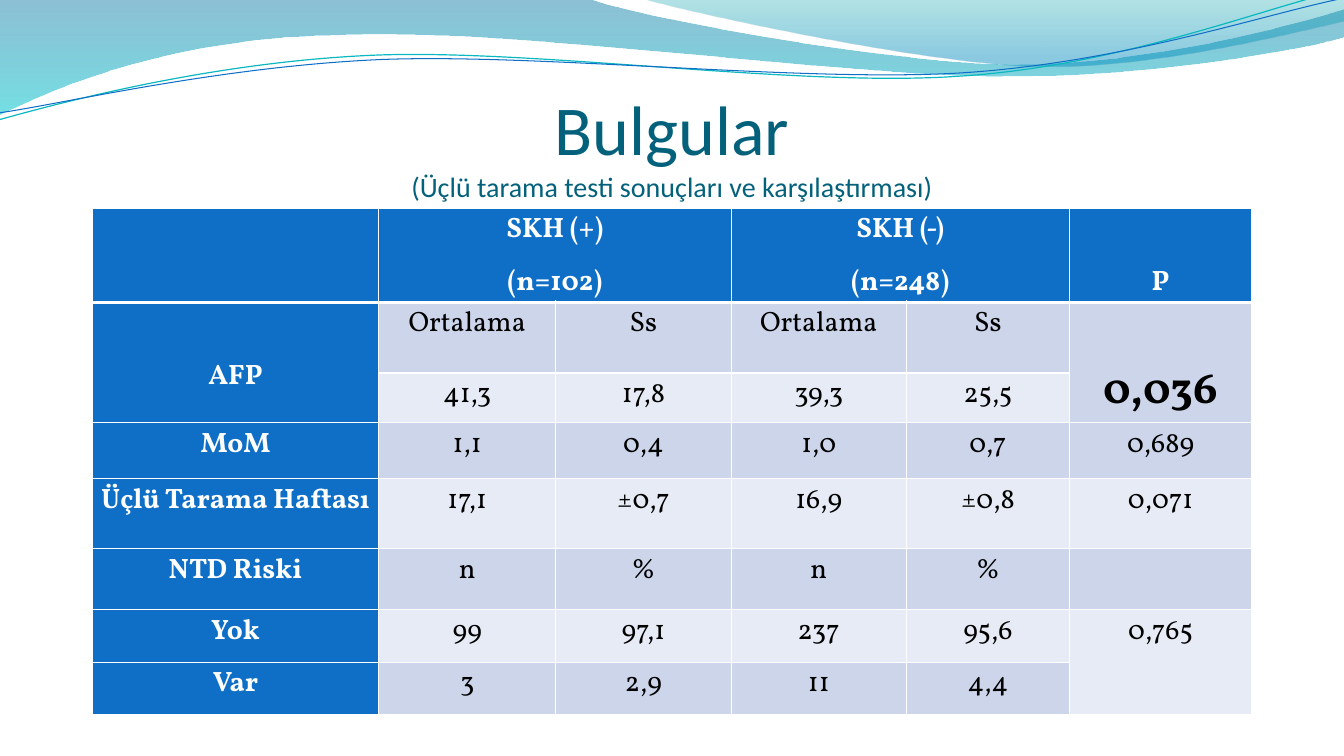
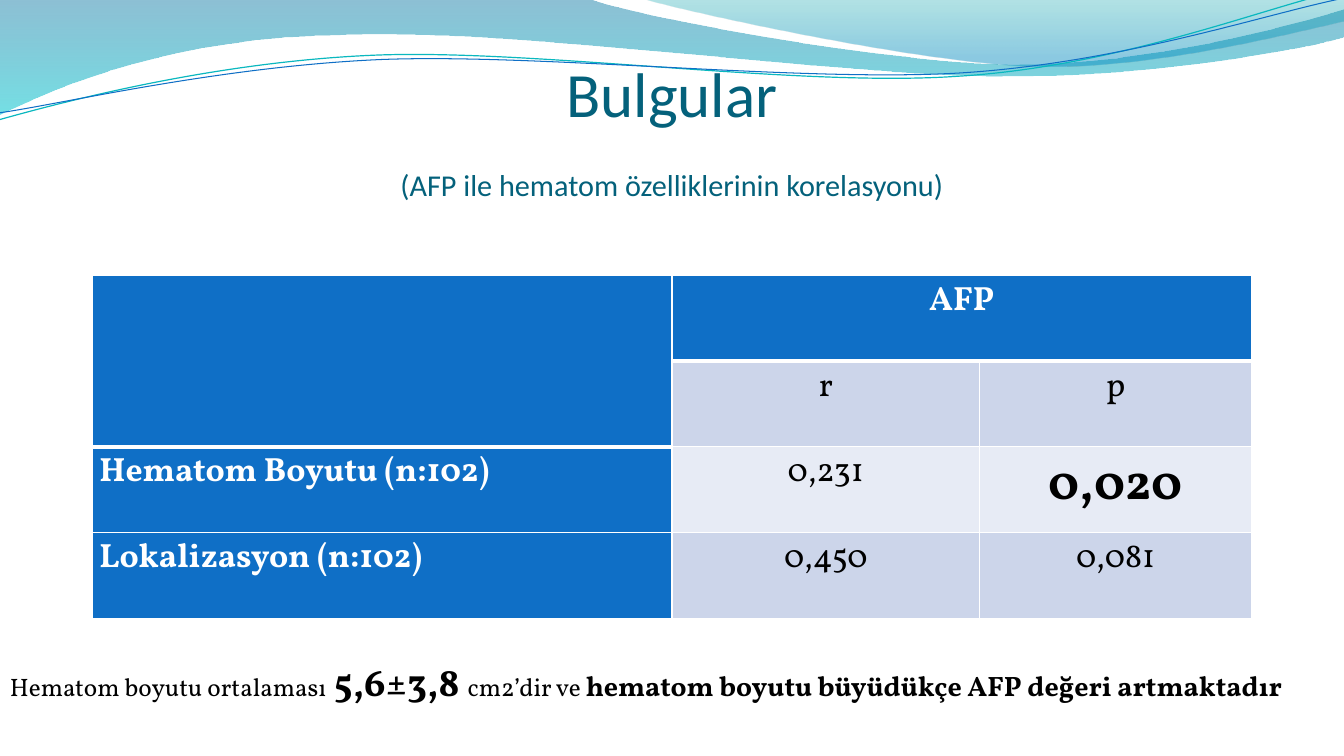
"""Build two findings slides with a shared wave banner, titles and tables."""
from dataclasses import dataclass, field
from math import cos, radians, sin
from typing import Any, NamedTuple

from lxml.etree import SubElement
from pptx import Presentation
from pptx.dml.color import RGBColor as Color
from pptx.enum.text import MSO_ANCHOR as Anchor, PP_ALIGN as Align
from pptx.oxml.ns import qn
from pptx.util import Pt


@dataclass(frozen=True)
class Theme:
    title_font: str = "Calibri"
    body_font: str = "Vollkorn"
    title: str = "04617B"
    header: str = "0F6FC6"
    bands: tuple[str, str] = ("E7EBF5", "CCD5EA")
    white: str = "FFFFFF"
    ink: str = "000000"
    thin_border: float = 1
    thick_border: float = 3
    line_spacing: float = 1.07
    note_sizes: tuple[float, float, float] = (18, 20, 28)


class Stop(NamedTuple):
    position: float
    color: str
    opacity: int


class Run(NamedTuple):
    text: str
    size: float
    bold: bool = False


@dataclass(frozen=True)
class Wave:
    start: tuple[float, float]
    segments: tuple[tuple[float, ...], ...]
    stops: tuple[Stop, ...] = ()
    line_color: str = ""
    line_width: float = 0
    tilt: float = 0


@dataclass(frozen=True)
class Title:
    heading: str
    subtitle: str
    heading_size: float
    subtitle_size: float
    gap: float = 0


@dataclass(frozen=True)
class TableSpec:
    top: float
    columns: tuple[float, ...]
    rows: tuple[float, ...]
    texts: tuple[tuple[str, ...], ...]
    merges: tuple[tuple[int, int, int, int], ...]
    size: float
    label_align: Align = Align.CENTER
    space_after: float = 0
    tight_rows: tuple[int, ...] = ()
    emphasis: dict[tuple[int, int], float] = field(default_factory=dict)
    lowered: dict[tuple[int, int], float] = field(default_factory=dict)


THEME = Theme()
WAVE_PIVOT = (479, 41.5)
WAVE_TILT = -2.7
TABLE_LEFT = 66

WAVES = (
    Wave(
        (0, 0),
        (
            (422.5, -0.5),
            (456.5, 12, 637, 45.5, 728, 45.5),
            (819.5, 45.5, 920, 18.5, 960, 6.5),
            (961, 26),
            (944, 31.5, 835, 54.5, 715.5, 54),
            (597, 54, 366.5, 20, 247, 24.5),
            (124, 26, 44, 60, -0.5, 81.5),
        ),
        stops=(Stop(0, "0074A1", 45), Stop(1, "00C6CF", 55)),
    ),
    Wave(
        (460, -0.5),
        (
            (489, 8, 654.5, 44.5, 738, 47),
            (821.5, 49.5, 923, 23, 960, 15),
            (960, 0),
        ),
        stops=(Stop(0, "00A1A9", 30), Stop(0.8, "008BBF", 45)),
    ),
    Wave(
        (-0.5, 85.5),
        (
            (46, 72.5, 152, 44.5, 265.5, 39.5),
            (379.5, 34.5, 569, 62.5, 684, 54.5),
            (799, 47.5, 901.5, 6, 958.5, -7),
        ),
        line_color="0AB8BF",
        line_width=0.85,
        tilt=WAVE_TILT,
    ),
    Wave(
        (0, 80.5),
        (
            (45.5, 74, 157, 47.5, 272, 42.5),
            (386.5, 38, 573, 59, 687.5, 52),
            (803, 44.5, 903.5, 10, 960.5, -1.5),
        ),
        line_color=THEME.header,
        line_width=0.75,
        tilt=WAVE_TILT,
    ),
)

SCREENING_TITLE = Title(
    "Bulgular", "(Üçlü tarama testi sonuçları ve karşılaştırması)", 50, 20
)
SCREENING_TABLE = TableSpec(
    top=148.8,
    columns=(204.5, 126.5, 125.3, 125.2, 116.5, 130.3),
    rows=(67.2, 50.5, 35.5, 40, 50, 43.5, 37.7, 37.3),
    texts=(
        ("", "SKH (+)\n(n=102)", "", "SKH (-)\n(n=248)", "", "P"),
        ("AFP", "Ortalama", "Ss", "Ortalama", "Ss", "0,036"),
        ("", "41,3", "17,8", "39,3", "25,5", ""),
        ("MoM", "1,1", "0,4", "1,0", "0,7", "0,689"),
        ("Üçlü Tarama Haftası", "17,1", "±0,7", "16,9", "±0,8", "0,071"),
        ("NTD Riski", "n", "%", "n", "%", ""),
        ("Yok", "99", "97,1", "237", "95,6", "0,765"),
        ("Var", "3", "2,9", "11", "4,4", ""),
    ),
    merges=((0, 1, 0, 2), (0, 3, 0, 4), (1, 0, 2, 0), (1, 5, 2, 5), (6, 5, 7, 5)),
    size=20,
    space_after=8,
    tight_rows=(4,),
    emphasis={(1, 5): 32},
    lowered={(0, 5): 37.5, (1, 0): 38, (1, 5): 39},
)

CORRELATION_TITLE = Title(
    "Bulgular", "(AFP ile hematom özelliklerinin korelasyonu)", 45, 21.6, gap=26
)
CORRELATION_TABLE = TableSpec(
    top=196.5,
    columns=(414, 219.8, 194.2),
    rows=(61.3,) * 4,
    texts=(
        ("", "AFP", ""),
        ("", "r", "p"),
        ("Hematom Boyutu (n:102)", "0,231", "0,020"),
        ("Lokalizasyon (n:102)", "0,450", "0,081"),
    ),
    merges=((0, 0, 1, 0), (0, 1, 0, 2)),
    size=24,
    label_align=Align.LEFT,
    emphasis={(2, 2): 36},
)
SMALL, MEDIUM, LARGE = THEME.note_sizes
CORRELATION_NOTE = (
    Run("Hematom boyutu ortalaması", SMALL),
    Run(" 5,6±3,8 ", LARGE, True),
    Run("cm2’dir ve ", SMALL),
    Run("hematom boyutu büyüdükçe AFP değeri artmaktadır", MEDIUM, True),
)


def apply_format(target: Any, values: dict[str, Any]) -> None:
    for name, value in values.items():
        setattr(target, name, value)


def add_run(paragraph: Any, run: Run, font: str, color: str) -> None:
    text_run = paragraph.add_run()
    text_run.text = run.text
    apply_format(text_run.font, {"name": font, "size": Pt(run.size), "bold": run.bold})
    text_run.font.color.rgb = Color.from_string(color)


def level_point(x: float, y: float, tilt: float) -> tuple[int, int]:
    angle = radians(-tilt)
    dx, dy = x - WAVE_PIVOT[0], y - WAVE_PIVOT[1]
    return (
        Pt(WAVE_PIVOT[0] + dx * cos(angle) - dy * sin(angle)),
        Pt(WAVE_PIVOT[1] + dx * sin(angle) + dy * cos(angle)),
    )


def bend_segments(shape: Any, wave: Wave) -> None:
    vertices = iter(list(shape.element.spPr.iter(qn("a:lnTo"))))
    for segment in wave.segments:
        curve = next(vertices)
        if len(segment) == 2:
            continue
        curve.tag = qn("a:cubicBezTo")
        for vertex in (next(vertices), next(vertices)):
            curve.append(vertex[0])
            vertex.getparent().remove(vertex)


def add_wave(slide: Any, wave: Wave) -> None:
    points = [
        level_point(*segment[index:index + 2], wave.tilt)
        for segment in wave.segments
        for index in range(0, len(segment), 2)
    ]
    builder = slide.shapes.build_freeform(*level_point(*wave.start, wave.tilt))
    builder.add_line_segments(points, close=bool(wave.stops))
    shape = builder.convert_to_shape()
    bend_segments(shape, wave)
    shape.rotation = wave.tilt
    shape.shadow.inherit = False
    if not wave.stops:
        shape.fill.background()
        shape.line.color.rgb = Color.from_string(wave.line_color)
        shape.line.width = Pt(wave.line_width)
        return
    shape.line.fill.background()
    shape.fill.gradient()
    shape.fill.gradient_angle = 270
    for gradient_stop, stop in zip(shape.fill.gradient_stops, wave.stops):
        gradient_stop.position = stop.position
        gradient_stop.color.rgb = Color.from_string(stop.color)
    for color, stop in zip(shape.element.spPr.iter(qn("a:srgbClr")), wave.stops):
        SubElement(color, qn("a:alpha"), val=str(stop.opacity * 1000))


def add_title(slide: Any, title: Title) -> None:
    frame = slide.shapes.add_textbox(Pt(48), Pt(55), Pt(864), Pt(90)).text_frame
    apply_format(frame, {
        "word_wrap": True, "vertical_anchor": Anchor.BOTTOM,
        "margin_left": 0, "margin_right": 0, "margin_top": 0, "margin_bottom": 0,
    })
    heading, subtitle = frame.paragraphs[0], frame.add_paragraph()
    subtitle.space_before = Pt(title.gap)
    for paragraph, text, size in (
        (heading, title.heading, title.heading_size),
        (subtitle, title.subtitle, title.subtitle_size),
    ):
        paragraph.alignment = Align.CENTER
        add_run(paragraph, Run(text, size), THEME.title_font, THEME.title)


def set_borders(cell: Any, bottom_width: float) -> None:
    properties = cell._tc.get_or_add_tcPr()
    for side in "LRTB":
        width = bottom_width if side == "B" else THEME.thin_border
        line = SubElement(properties, qn(f"a:ln{side}"), w=str(Pt(width)))
        fill = SubElement(line, qn("a:solidFill"))
        SubElement(fill, qn("a:srgbClr"), val=THEME.white)


def fill_cell(cell: Any, spec: TableSpec, row: int, column: int) -> None:
    position = (row, column)
    is_header = row == 0 or column == 0
    set_borders(cell, THEME.thick_border if row == 0 else THEME.thin_border)
    cell.fill.solid()
    background = THEME.header if is_header else THEME.bands[row % 2]
    cell.fill.fore_color.rgb = Color.from_string(background)
    apply_format(cell, {
        "margin_left": Pt(5), "margin_right": Pt(5), "margin_bottom": 0,
        "margin_top": Pt(spec.lowered.get(position, 0)),
    })
    text = spec.texts[row][column]
    if not text:
        return
    size = spec.emphasis.get(position, spec.size)
    bold = is_header or position in spec.emphasis
    color = THEME.white if is_header else THEME.ink
    for index, line in enumerate(text.split("\n")):
        frame = cell.text_frame
        paragraph = frame.add_paragraph() if index else frame.paragraphs[0]
        apply_format(paragraph, {
            "alignment": Align.CENTER if column else spec.label_align,
            "line_spacing": THEME.line_spacing,
            "space_after": Pt(0 if row in spec.tight_rows else spec.space_after),
        })
        add_run(paragraph, Run(line, size, bold), THEME.body_font, color)


def add_data_table(slide: Any, spec: TableSpec) -> None:
    table = slide.shapes.add_table(
        len(spec.rows), len(spec.columns), Pt(TABLE_LEFT), Pt(spec.top),
        Pt(sum(spec.columns)), Pt(sum(spec.rows)),
    ).table
    apply_format(table, {"first_row": False, "horz_banding": False})
    for column, width in zip(table.columns, spec.columns):
        column.width = Pt(width)
    for row, height in zip(table.rows, spec.rows):
        row.height = Pt(height)
    for top, left, bottom, right in spec.merges:
        table.cell(top, left).merge(table.cell(bottom, right))
    for row in range(len(spec.rows)):
        for column in range(len(spec.columns)):
            fill_cell(table.cell(row, column), spec, row, column)


def add_note(slide: Any, runs: tuple[Run, ...]) -> None:
    frame = slide.shapes.add_textbox(0, Pt(466), Pt(952), Pt(41)).text_frame
    frame.word_wrap = True
    for run in runs:
        add_run(frame.paragraphs[0], run, THEME.body_font, THEME.ink)


def add_findings_slide(presentation: Any, title: Title, table: TableSpec) -> Any:
    slide = presentation.slides.add_slide(presentation.slide_layouts[6])
    for wave in WAVES:
        add_wave(slide, wave)
    add_title(slide, title)
    add_data_table(slide, table)
    return slide


def main() -> None:
    presentation = Presentation()
    apply_format(presentation, {"slide_width": Pt(960), "slide_height": Pt(540)})
    add_findings_slide(presentation, SCREENING_TITLE, SCREENING_TABLE)
    slide = add_findings_slide(presentation, CORRELATION_TITLE, CORRELATION_TABLE)
    add_note(slide, CORRELATION_NOTE)
    presentation.save("out.pptx")


if __name__ == "__main__":
    main()
